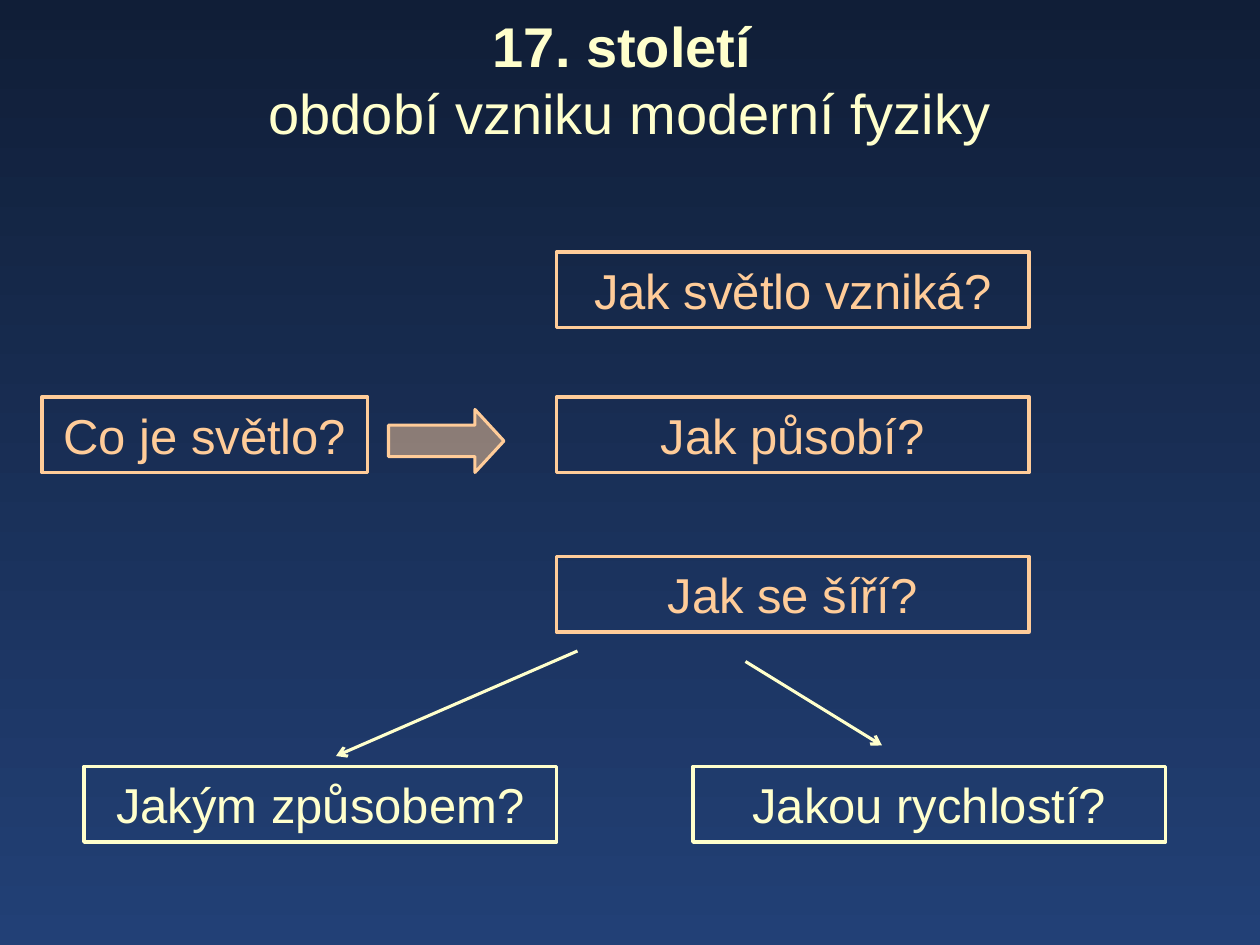
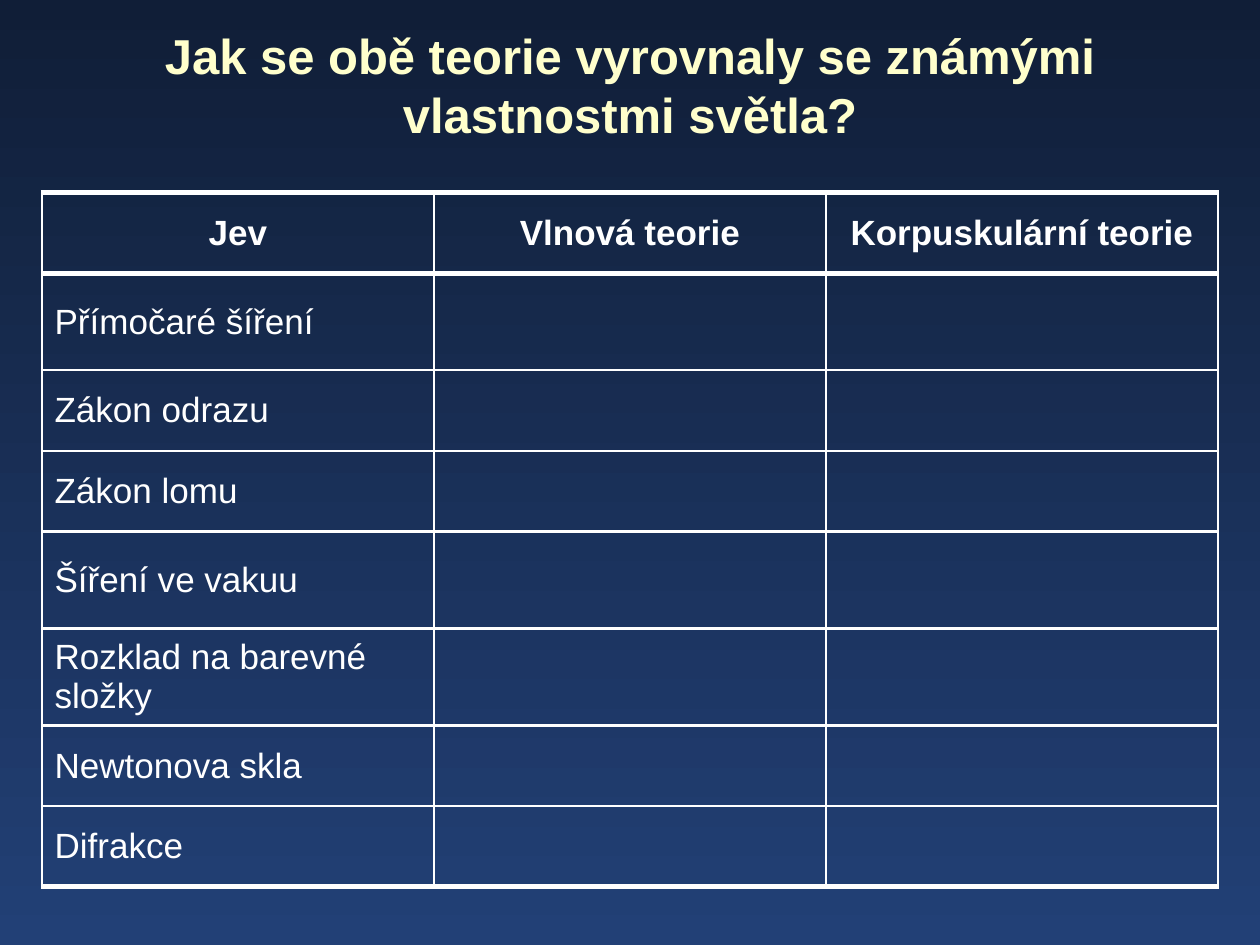
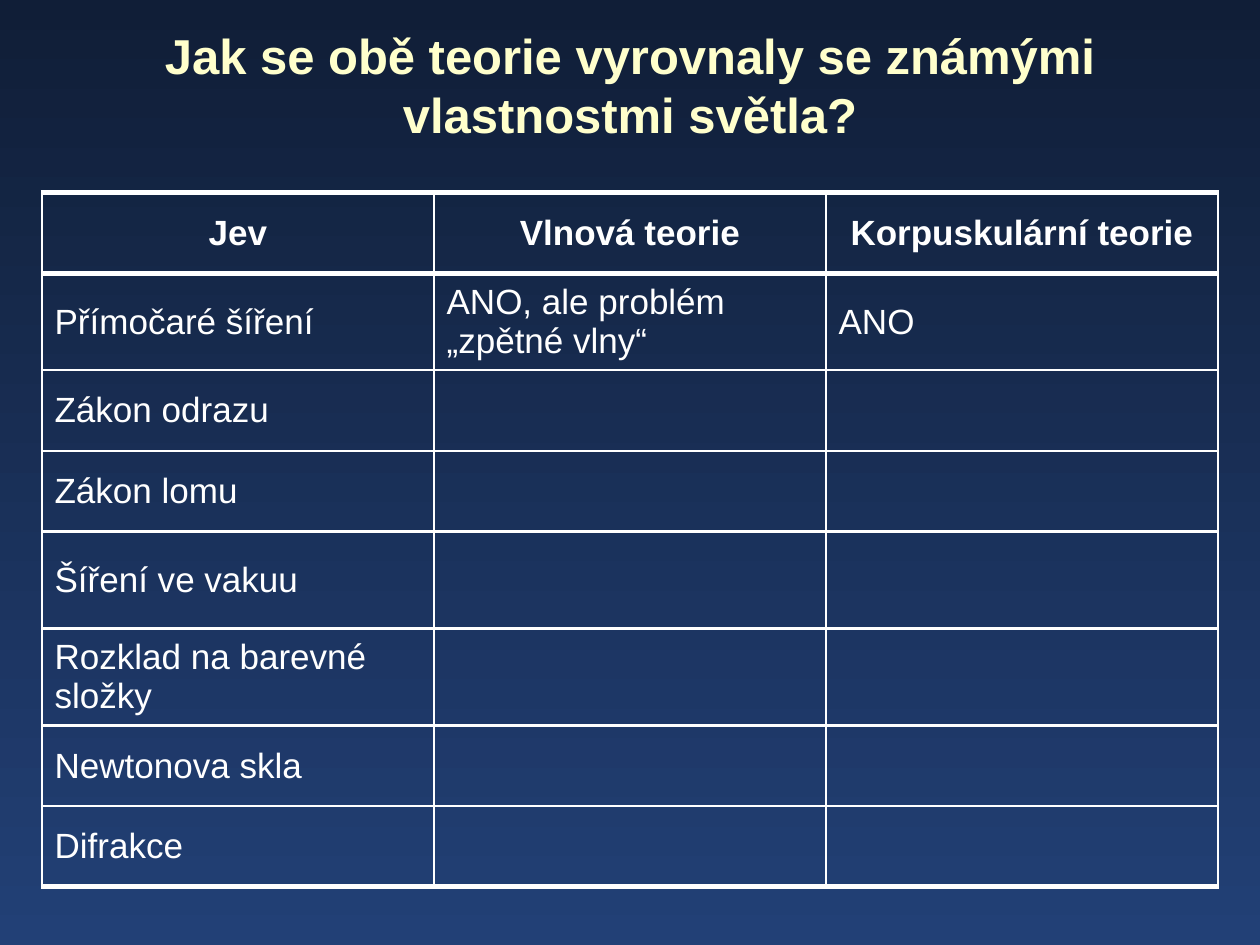
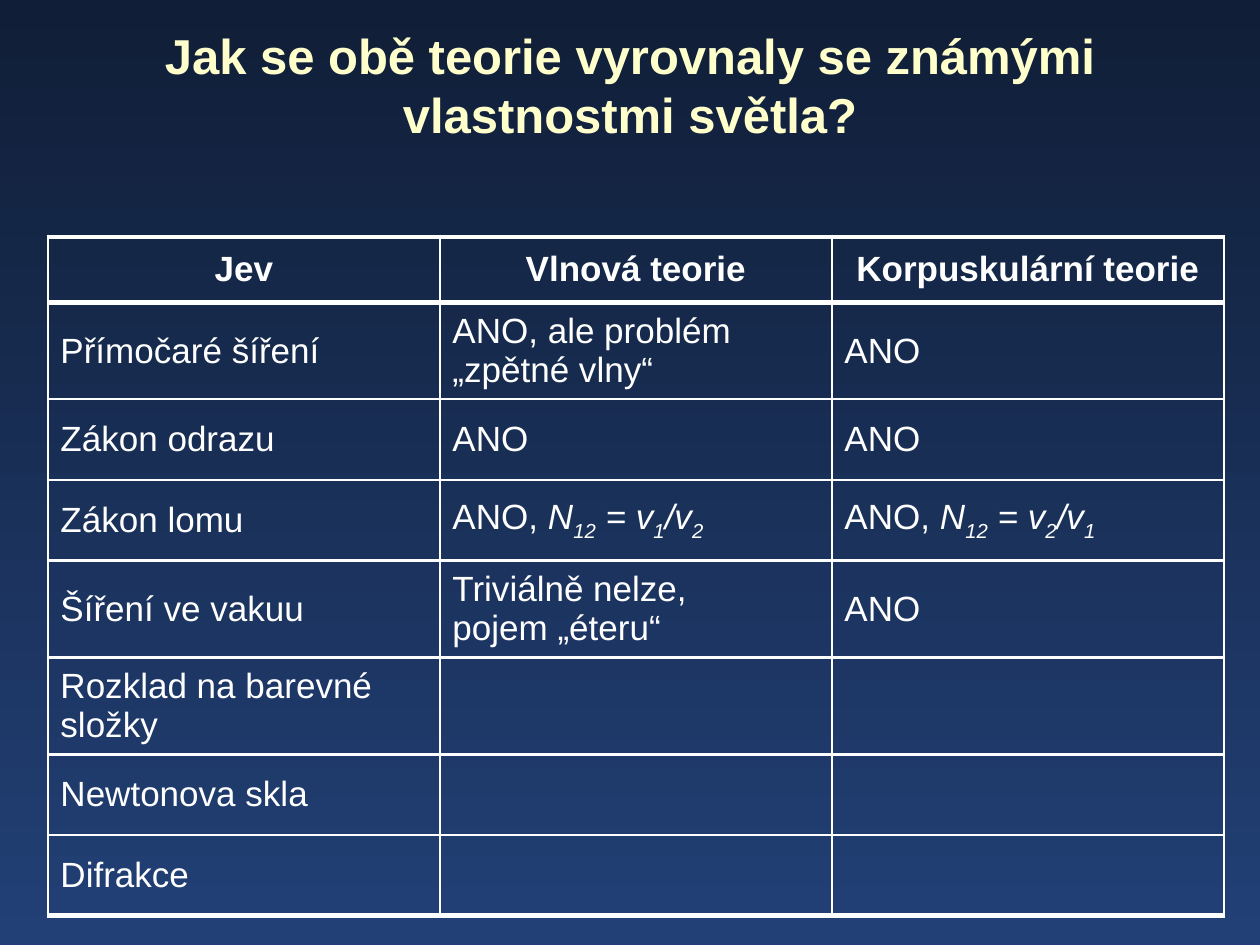
import pptx
import pptx.util
import pptx.dml.color
import pptx.enum.shapes
import pptx.enum.text
import pptx.oxml.ns
import lxml.etree

HUES = {"night": "101E37", "blue": "224076", "cream": "FFFFCC",
        "peach": "FFCC99", "white": "FFFFFF"}
FACE = "Arial"
WIDE, HIGH = 10, 7.5        # slide, inches
COLS, ROWS = 120, 90        # grid over the slide
MID = pptx.enum.text.MSO_ANCHOR.MIDDLE
CENTRE = pptx.enum.text.PP_ALIGN.CENTER
KINDS = pptx.enum.shapes.MSO_SHAPE

HEADING = "Jak se obě teorie vyrovnaly se známými vlastnostmi světla?"
HEADS = ["Jev", "Vlnová teorie", "Korpuskulární teorie"]
ITEMS = ["Přímočaré šíření", "Zákon odrazu", "Zákon lomu", "Šíření ve vakuu",
         "Rozklad na barevné složky", "Newtonova skla", "Difrakce"]
TALLS = [9.24, 7.68, 7.68, 9.24, 9.24, 7.68, 7.68]


# Shared helpers
def hue(name):
    return pptx.dml.color.RGBColor.from_string(HUES[name])


def span(col):
    return pptx.util.Inches(col * WIDE / COLS)


def drop(row):
    return pptx.util.Inches(row * HIGH / ROWS)


def place(box):
    x, y, w, h = box
    return span(x), drop(y), span(w), drop(h)


def style(thing, values):
    for name, value in values.items():
        setattr(thing, name, value)


def add_xml(parent, tag, **values):
    return lxml.etree.SubElement(parent, pptx.oxml.ns.qn(tag), values)


def write(para, parts, size, tint):
    """Fill a paragraph from (text, format) parts; a newline breaks the line."""
    for text, form in parts:
        for i, line in enumerate(text.split("\n")):
            if i:
                para.add_line_break()
            if not line:
                continue
            run = para.add_run()
            run.text = line
            form = dict(form)
            base = form.pop("base", None)
            style(run.font, {"name": FACE, "size": pptx.util.Pt(size),
                             "bold": False, **form})
            run.font.color.rgb = hue(tint)
            if base:
                run.font._element.set("baseline", str(base))


def outline(shape, tint, width):
    shape.line.color.rgb = hue(tint)
    shape.line.width = pptx.util.Pt(width)


def title(slide, box, parts, size):
    frame = slide.shapes.add_textbox(*place(box)).text_frame
    style(frame, {"word_wrap": True, "vertical_anchor": MID})
    para = frame.paragraphs[0]
    para.alignment = CENTRE
    write(para, parts, size, "cream")


# Question map
def frame_text(shapes, box, text, tint):
    shape = shapes.add_shape(KINDS.RECTANGLE, *place(box))
    shape.shadow.inherit = False
    shape.fill.background()
    outline(shape, tint, 2)
    style(shape.text_frame, {"word_wrap": True, "vertical_anchor": MID})
    para = shape.text_frame.paragraphs[0]
    para.alignment = CENTRE
    write(para, [(text, {})], 28, tint)


def block_arrow(shapes, box):
    arrow = shapes.add_shape(KINDS.RIGHT_ARROW, *place(box))
    arrow.shadow.inherit = False
    arrow.adjustments[1] = 0.46
    arrow.fill.solid()
    arrow.fill.fore_color.rgb = hue("peach")
    tone = arrow._element.spPr.find(".//" + pptx.oxml.ns.qn("a:srgbClr"))
    add_xml(tone, "a:alpha", val="50000")
    outline(arrow, "peach", 1.75)


def pointer(shapes, x1, y1, x2, y2):
    line = shapes.add_connector(pptx.enum.shapes.MSO_CONNECTOR.STRAIGHT,
                                span(x1), drop(y1), span(x2), drop(y2))
    outline(line, "cream", 1.75)
    props = line._element.spPr
    add_xml(props.get_or_add_ln(), "a:tailEnd", type="arrow")
    add_xml(props, "a:effectLst")


def question_map(slide, box):
    x, y, w, h = box
    wide, tall = 45, 7.2
    shapes = slide.shapes
    row = y + 13.8
    frame_text(shapes, (x, row, 31, tall), "Co je světlo?", "peach")
    asks = [("Jak světlo vzniká?", y), ("Jak působí?", row),
            ("Jak se šíří?", y + 29)]
    for text, top in asks:
        frame_text(shapes, (x + 49, top, wide, tall), text, "peach")
    block_arrow(shapes, (x + 33, y + 15, 11, 6))
    # Two branches, each a box and its pointer
    forks = [("Jakou rychlostí?", x + w - wide, (67, 39, 80, 47)),
             ("Jakým způsobem?", x + 4, (51, 38, 28, 48))]
    for text, left, (x1, y1, x2, y2) in forks:
        group = slide.shapes.add_group_shape().shapes
        frame_text(group, (left, y + h - tall, wide, tall), text, "cream")
        pointer(group, x + x1, y + y1, x + x2, y + y2)


# Comparison table
def border(cell, widths):
    props = cell._tc.get_or_add_tcPr()
    for side, width in widths.items():
        line = add_xml(props, "a:ln" + side, w=str(pptx.util.Pt(width)))
        fill = add_xml(line, "a:solidFill")
        add_xml(fill, "a:srgbClr", val=HUES["white"])


def fill_cell(cell, parts, head):
    thin = pptx.util.Inches(0.05)
    edge = thin if head else pptx.util.Inches(0.1)
    style(cell, {"vertical_anchor": MID, "margin_left": edge,
                 "margin_right": edge, "margin_top": thin,
                 "margin_bottom": thin})
    if parts:
        para = cell.text_frame.paragraphs[0]
        if head:
            para.alignment = CENTRE
        write(para, parts, 20, "white")


def theory_table(slide, box, top, known):
    """Lay out the theories; known holds the answers of the first rows."""
    talls = [top] + TALLS
    rows = [[[(text, {"bold": True})] for text in HEADS]]
    for i, item in enumerate(ITEMS):
        rows.append([[(item, {})]] + (known[i] if i < len(known) else [[], []]))
    x, y, w = box
    table = slide.shapes.add_table(
        len(rows), len(HEADS), *place((x, y, w, sum(talls)))).table
    style(table, {"first_row": False, "horz_banding": False})
    for col in table.columns:
        col.width = span(w / len(HEADS))
    last = len(rows) - 1
    for r, cells in enumerate(rows):
        table.rows[r].height = drop(talls[r])
        widths = {"L": 1.5, "R": 1.5, "T": 3 if r < 2 else 1.5,
                  "B": 3 if r in (0, last) else 1.5}
        for c, parts in enumerate(cells):
            cell = table.cell(r, c)
            border(cell, widths)
            cell.fill.background()
            fill_cell(cell, parts, r == 0)


def plain(*texts):
    return [[(text, {})] for text in texts]


def law(over, under):
    lean, low = {"italic": True}, {"italic": True, "base": -25000}
    return [("ANO, ", {}), ("N", lean), ("12", low), (" = v", lean),
            (over, low), ("/v", lean), (under, low)]


def main():
    deck = pptx.Presentation()
    style(deck, {"slide_width": pptx.util.Inches(WIDE),
                 "slide_height": pptx.util.Inches(HIGH)})
    # Shared background
    back = deck.slide_master.background.fill
    back.gradient()
    back.gradient_angle = 270
    for stop, name, spot in zip(back.gradient_stops, ("night", "blue"), (0, 1)):
        stop.color.rgb = hue(name)
        stop.position = spot
    blank = deck.slide_layouts[6]

    # Opening questions
    slide = deck.slides.add_slide(blank)
    title(slide, (9, 0, 102, 15),
          [("17. století \n", {"bold": True}),
           ("období vzniku moderní fyziky", {})], 32)
    question_map(slide, (4, 24, 107, 56.2))

    # The table, filled in step by step
    first = [plain("ANO, ale problém „zpětné vlny“", "ANO")]
    more = first + [plain("ANO", "ANO"), [law("1", "2"), law("2", "1")],
                    plain("Triviálně nelze,\npojem „éteru“", "ANO")]
    steps = [((4, 18.36, 112), 7.68, []), ((4, 18.36, 112), 7.68, first),
             ((4.56, 22.56, 112), 6.24, more)]
    for box, top, known in steps:
        slide = deck.slides.add_slide(blank)
        title(slide, (9, 3, 102, 10), [(HEADING, {"bold": True})], 28)
        theory_table(slide, box, top, known)

    deck.save("out.pptx")


if __name__ == "__main__":
    main()
